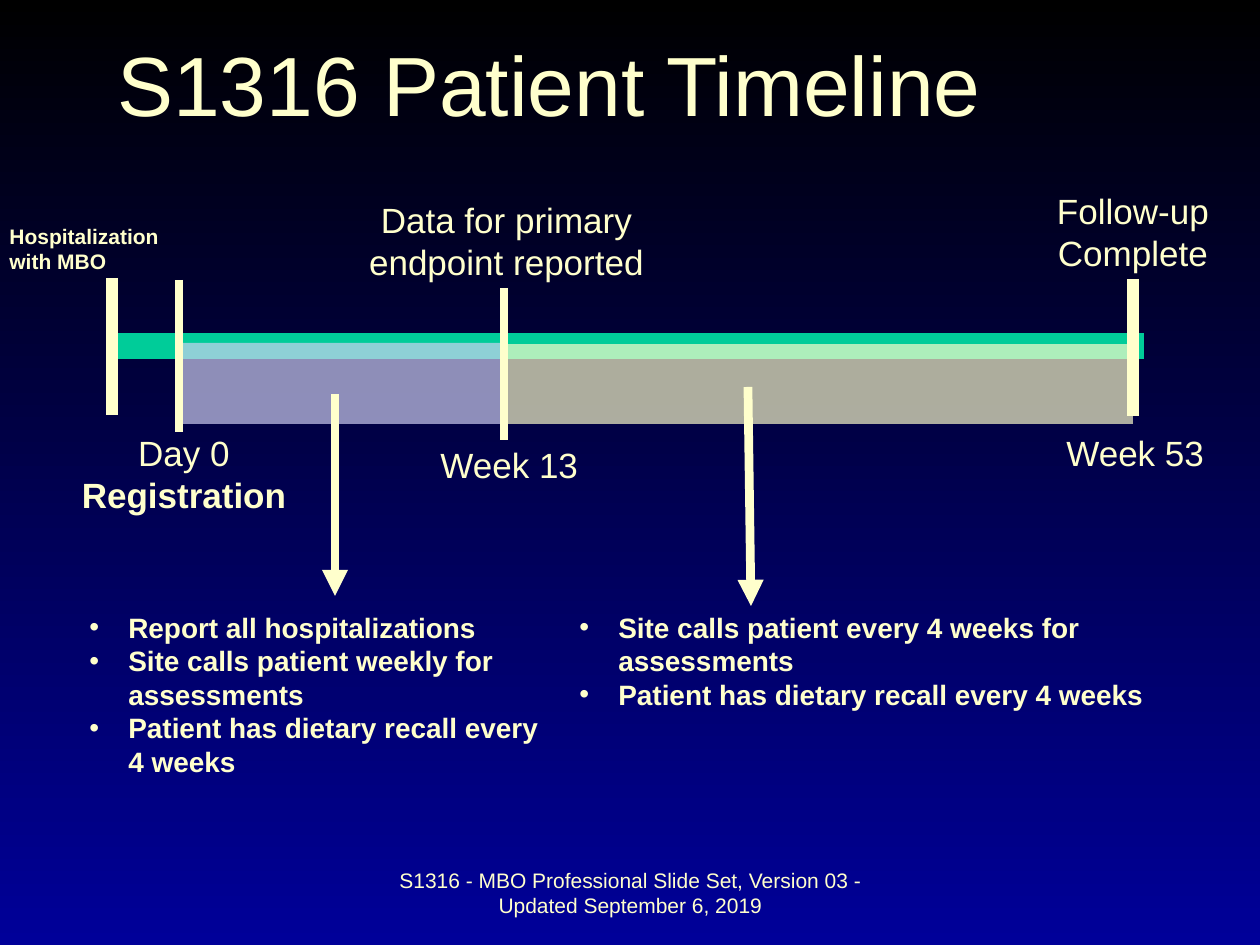
from lxml.etree import SubElement
from pptx import Presentation
from pptx.dml.color import RGBColor
from pptx.enum.shapes import MSO_CONNECTOR, MSO_SHAPE
from pptx.enum.text import PP_ALIGN
from pptx.oxml.ns import qn
from pptx.util import Emu, Pt

BLACK = RGBColor(0x00, 0x00, 0x00)
NAVY = RGBColor(0x00, 0x00, 0x99)
CREAM = RGBColor(0xFF, 0xFF, 0xCC)
GREEN = RGBColor(0x00, 0xCC, 0x99)
LILAC = RGBColor(0xD2, 0xD2, 0xF4)
INDENT = 39


def px(size):
    return Emu(round(size * 914400 / 126))


class Deck:
    """Holds the style and the current slide."""
    font = "Arial"
    ink = CREAM

    def __init__(self, wide, high):
        self.file = Presentation()
        self.file.slide_width, self.file.slide_height = px(wide), px(high)
        self.slide = self.file.slides.add_slide(self.file.slide_layouts[6])

    def shade(self, top, base):
        """Fill the background with a gradient running down."""
        fill = self.slide.background.fill
        fill.gradient()
        fill.gradient_angle = 270
        for stop, color in zip(fill.gradient_stops, (top, base)):
            stop.color.rgb = color

    def line(self, start, end, width, color=None, arrow=False):
        line = self.slide.shapes.add_connector(
            MSO_CONNECTOR.STRAIGHT, *map(px, start + end))
        line.line.width = Pt(width)
        line.line.color.rgb = color or self.ink
        if arrow:
            SubElement(line.line._get_or_add_ln(), qn("a:tailEnd"), type="triangle")
        SubElement(line._element.spPr, qn("a:effectLst"))

    def band(self, box, color, alpha):
        """Draw a borderless rectangle with alpha in percent."""
        band = self.slide.shapes.add_shape(MSO_SHAPE.RECTANGLE, *map(px, box))
        band.shadow.inherit = False
        band.line.fill.background()
        band.fill.solid()
        band.fill.fore_color.rgb = color
        tint = band._element.spPr.find(qn("a:solidFill"))[0]
        SubElement(tint, qn("a:alpha"), val=str(alpha * 1000))

    def text(self, box, *rows, size=20, bold=False, align=PP_ALIGN.LEFT,
             wrap=True, bullet=False):
        """Write one paragraph per row and return the text frame."""
        frame = self.slide.shapes.add_textbox(*map(px, box)).text_frame
        frame.word_wrap = wrap
        for i, row in enumerate(rows):
            para = frame.add_paragraph() if i else frame.paragraphs[0]
            para.alignment = align
            if bullet:
                props = para._p.get_or_add_pPr()
                props.set("marL", str(px(INDENT)))
                props.set("indent", str(-px(INDENT)))
                SubElement(props, qn("a:buFont"), typeface=self.font)
                SubElement(props, qn("a:buChar"), char="•")
            run = para.add_run()
            run.text = row
            run.font.name = self.font
            run.font.size = Pt(size)
            run.font.bold = bold
            run.font.color.rgb = self.ink
        return frame


def main():
    deck = Deck(1260, 945)
    deck.shade(BLACK, NAVY)
    mid = PP_ALIGN.CENTER

    deck.line((112, 346), (1144, 346), 15, GREEN)
    deck.text((105, 26, 1109, 115), "S1316 Patient Timeline", size=48)

    deck.band((179, 343, 328, 81), LILAC, 68)
    deck.band((507, 344, 626, 80), CREAM, 68)
    ticks = [(112, 278, 415, 7), (179, 280, 432, 5),
             (504, 288, 440, 5), (1133, 279, 416, 7)]
    for x, top, base, width in ticks:
        deck.line((x, top), (x, base), width)

    deck.text((-3, 217, 181, 63), "Hospitalization with MBO", size=12, bold=True)
    deck.text((353, 192, 307, 97), "Data for primary endpoint reported", align=mid)
    deck.text((1040, 183, 186, 97), "Follow-up Complete", align=mid)
    start = deck.text((68, 425, 232, 140), "Day 0", "Registration",
                      align=mid, wrap=False)
    start.paragraphs[1].runs[0].font.bold = True
    deck.text((428, 437, 164, 55), "Week 13", wrap=False)
    deck.text((1054, 425, 164, 55), "Week 53", wrap=False)

    deck.line((335, 394), (335, 596), 5, arrow=True)
    deck.line((748, 387), (751, 606), 5, arrow=True)
    deck.text((77, 604, 490, 183),
              "Report all hospitalizations",
              "Site calls patient weekly for assessments",
              "Patient has dietary recall every 4 weeks",
              size=16, bold=True, bullet=True)
    deck.text((567, 604, 693, 115),
              "Site calls patient every 4 weeks for assessments",
              "Patient has dietary recall every 4 weeks",
              size=16, bold=True, bullet=True)

    deck.text((368, 861, 525, 63),
              "S1316 - MBO Professional Slide Set, Version 03 - "
              "Updated September 6, 2019", size=12, align=mid)
    deck.file.save("out.pptx")


if __name__ == "__main__":
    main()
